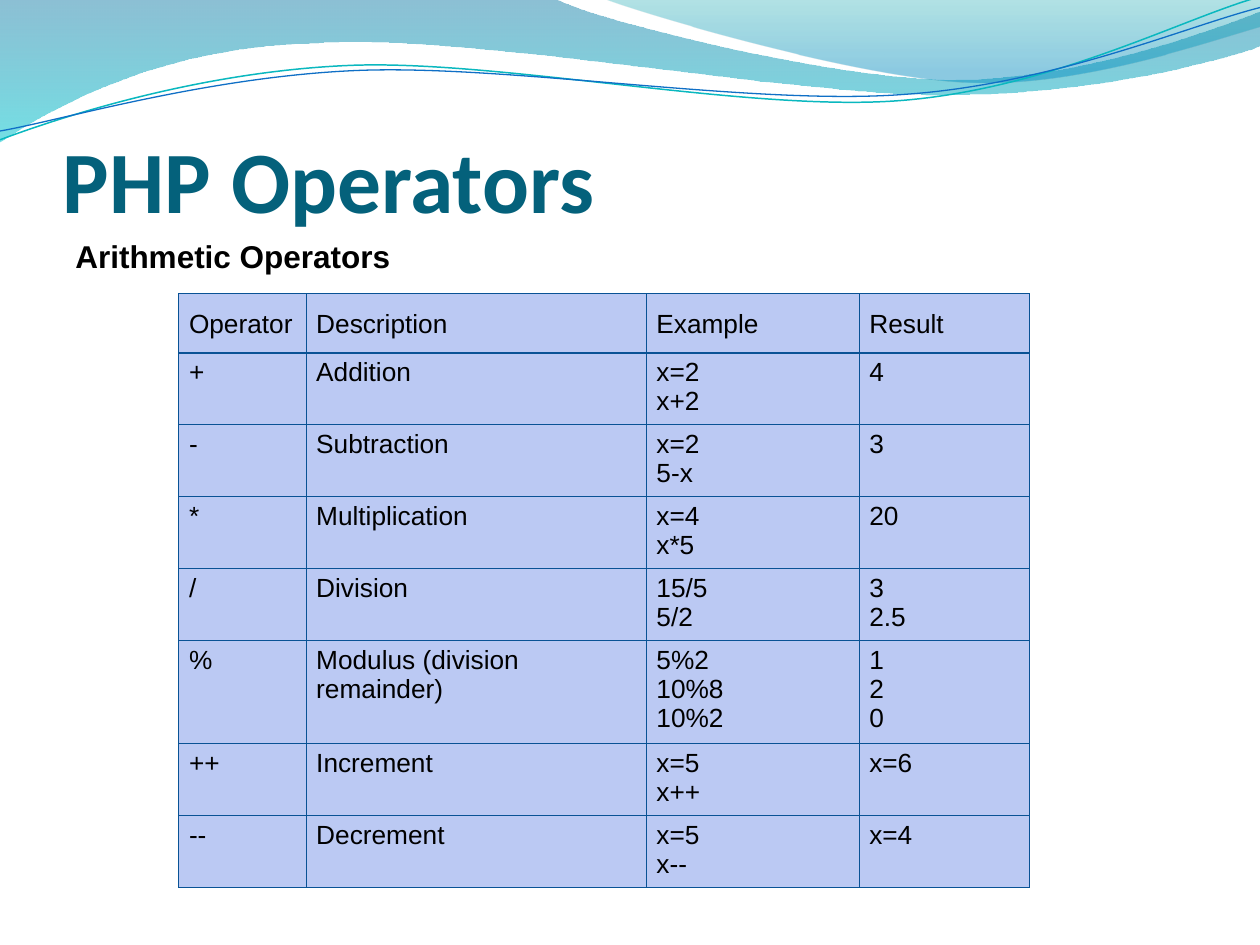
from copy import deepcopy
from pptx import Presentation
from pptx import util as u
from pptx.dml.color import RGBColor
from pptx.enum import text
from pptx.oxml import parse_xml
from pptx.oxml.ns import nsdecls, qn

BLACK = RGBColor(0x00, 0x00, 0x00)
TITLE = RGBColor(0x04, 0x61, 0x7B)
CELL = RGBColor(0xBB, 0xC9, 0xF3)
BORDER = RGBColor(0x09, 0x52, 0x95)
TEAL = RGBColor(0x0A, 0xB8, 0xBF)
BLUE = RGBColor(0x0F, 0x6F, 0xC6)
DEEP_BLUE = RGBColor(0x00, 0x74, 0xA1)
AQUA = RGBColor(0x00, 0xC6, 0xCF)
GREEN = RGBColor(0x00, 0xA1, 0xA9)
SKY = RGBColor(0x00, 0x8B, 0xBF)

COLS = [1.01, 2.7, 1.69, 1.35]
HEAD_ROW, BODY_ROW, TALL_ROW = u.Pt(34), u.Pt(39.15), u.Pt(55.85)
ROWS = [
    ("Operator", "Description", "Example", "Result"),
    ("+", "Addition", "x=2\vx+2", "4"),
    ("-", "Subtraction", "x=2\v5-x", "3"),
    ("*", "Multiplication", "x=4\vx*5", "20"),
    ("/", "Division", "15/5\v5/2", "3\v2.5"),
    ("%", "Modulus (division remainder)", "5%2\v10%8\v10%2", "1\v2\v0"),
    ("++", "Increment", "x=5\vx++", "x=6"),
    ("--", "Decrement", "x=5\vx--", "x=4"),
]

BACK_WAVE = [
    [(0, 0)],
    [(4.4, -0.01)],
    [(4.76, 0.17), (6.64, 0.63), (7.58, 0.63)],
    [(8.53, 0.63), (9.58, 0.26), (10, 0.09)],
    [(10.01, 0.36)],
    [(9.83, 0.44), (8.7, 0.76), (7.46, 0.75)],
    [(6.22, 0.75), (3.82, 0.28), (2.57, 0.34)],
    [(1.29, 0.36), (0.46, 0.83), (-0.01, 1.13)],
]
FRONT_WAVE = [
    [(4.79, -0.01)],
    [(5.09, 0.11), (6.82, 0.62), (7.69, 0.65)],
    [(8.56, 0.69), (9.61, 0.32), (10, 0.21)],
    [(10, 0)],
]
TEAL_LINE = [
    [(0, 1.11)],
    [(0.48, 0.93), (1.58, 0.57), (2.77, 0.52)],
    [(3.95, 0.47), (5.93, 0.89), (7.13, 0.8)],
    [(8.33, 0.71), (9.38, 0.15), (9.98, -0.02)],
]
BLUE_LINE = [
    [(0, 1.04)],
    [(0.47, 0.96), (1.64, 0.61), (2.83, 0.56)],
    [(4.03, 0.51), (5.97, 0.84), (7.17, 0.75)],
    [(8.36, 0.67), (9.41, 0.21), (10, 0.06)],
]


def add_outline(slide, segments, close):
    points = [(u.Inches(x), u.Inches(y)) for seg in segments for x, y in seg]
    builder = slide.shapes.build_freeform(*points[0])
    builder.add_line_segments(points[1:], close=close)
    sp = builder.convert_to_shape()
    sp.shadow.inherit = False
    steps = iter(list(sp._element.spPr.iter(qn("a:lnTo"))))
    for seg in segments[1:]:
        group = [next(steps) for _ in seg]
        if len(group) == 3:
            curve = parse_xml(f'<a:cubicBezTo {nsdecls("a")}/>')
            group[0].addprevious(curve)
            for step in group:
                curve.append(step[0])
                step.getparent().remove(step)
    return sp


def add_wave(slide, segments, stops):
    sp = add_outline(slide, segments, True)
    sp.line.fill.background()
    sp.fill.gradient()
    sp.fill.gradient_angle = 270
    for stop, (position, color, opacity) in zip(sp.fill.gradient_stops, stops):
        stop.position = position
        stop.color.rgb = color
    colors = sp._element.spPr.iter(qn("a:srgbClr"))
    for clr, (position, color, opacity) in zip(list(colors), stops):
        clr.append(parse_xml(f'<a:alpha {nsdecls("a")} val="{opacity * 1000}"/>'))


def add_curve(slide, segments, color, width):
    sp = add_outline(slide, segments, False)
    sp.fill.background()
    sp.line.color.rgb = color
    sp.line.width = u.Pt(width)


def style_text(p, font, size, color, bold):
    for r in p.runs:
        r.font.name = font
        r.font.size = u.Pt(size)
        r.font.bold = bold
        r.font.color.rgb = color
    for br in p._p.findall(qn("a:br")):
        br.append(deepcopy(p.runs[0]._r.rPr))


def add_label(slide, words, box, font, size, color, anchor, inset):
    sp = slide.shapes.add_textbox(*[u.Inches(n) for n in box])
    tf = sp.text_frame
    tf.word_wrap = True
    tf.vertical_anchor = anchor
    tf.margin_left = tf.margin_right = u.Inches(inset)
    tf.text = words
    style_text(tf.paragraphs[0], font, size, color, True)
    return tf


def add_borders(cell):
    tcPr = cell._tc.get_or_add_tcPr()
    for i, side in enumerate(("lnL", "lnR", "lnT", "lnB")):
        tcPr.insert(i, parse_xml(
            f'<a:{side} {nsdecls("a")} w="{u.Pt(0.75)}"><a:solidFill>'
            f'<a:srgbClr val="{BORDER}"/></a:solidFill></a:{side}>'))


def fill_cell(cell, words, anchor):
    cell.fill.solid()
    cell.fill.fore_color.rgb = CELL
    cell.vertical_anchor = anchor
    cell.margin_left = cell.margin_right = u.Inches(0.08)
    cell.margin_top = u.Inches(0.04)
    cell.margin_bottom = u.Inches(0.03)
    p = cell.text_frame.paragraphs[0]
    p.text = words
    style_text(p, "Arial", 15, BLACK, False)
    add_borders(cell)


def add_operator_table(slide):
    heights = [HEAD_ROW] + [TALL_ROW if row[0] == "%" else BODY_ROW for row in ROWS[1:]]
    widths = [u.Inches(n) for n in COLS]
    table = slide.shapes.add_table(len(ROWS), len(COLS), u.Inches(1.42), u.Inches(2.33),
                                   sum(widths), sum(heights)).table
    table.first_row = table.horz_banding = False
    for column, width in zip(table.columns, widths):
        column.width = width
    for i, (row, height) in enumerate(zip(ROWS, heights)):
        table.rows[i].height = height
        anchor = text.MSO_ANCHOR.TOP if i else text.MSO_ANCHOR.MIDDLE
        for j, words in enumerate(row):
            fill_cell(table.cell(i, j), words, anchor)


def main():
    prs = Presentation()
    prs.slide_width, prs.slide_height = u.Inches(10), u.Inches(7.5)
    slide = prs.slides.add_slide(prs.slide_layouts[6])
    add_wave(slide, BACK_WAVE, [(0, DEEP_BLUE, 45), (1, AQUA, 55)])
    add_wave(slide, FRONT_WAVE, [(0, GREEN, 30), (0.8, SKY, 45)])
    add_curve(slide, TEAL_LINE, TEAL, 0.85)
    add_curve(slide, BLUE_LINE, BLUE, 0.75)
    tf = add_label(slide, "PHP Operators", (0.5, 0.58, 9, 1.25), "Calibri", 50,
                   TITLE, text.MSO_ANCHOR.BOTTOM, 0)
    tf.margin_bottom = 0
    add_operator_table(slide)
    add_label(slide, "Arithmetic Operators", (0.5, 1.83, 3.33, 0.4), "Arial", 18,
              BLACK, text.MSO_ANCHOR.MIDDLE, 0.1)
    prs.save("out.pptx")


if __name__ == "__main__":
    main()
